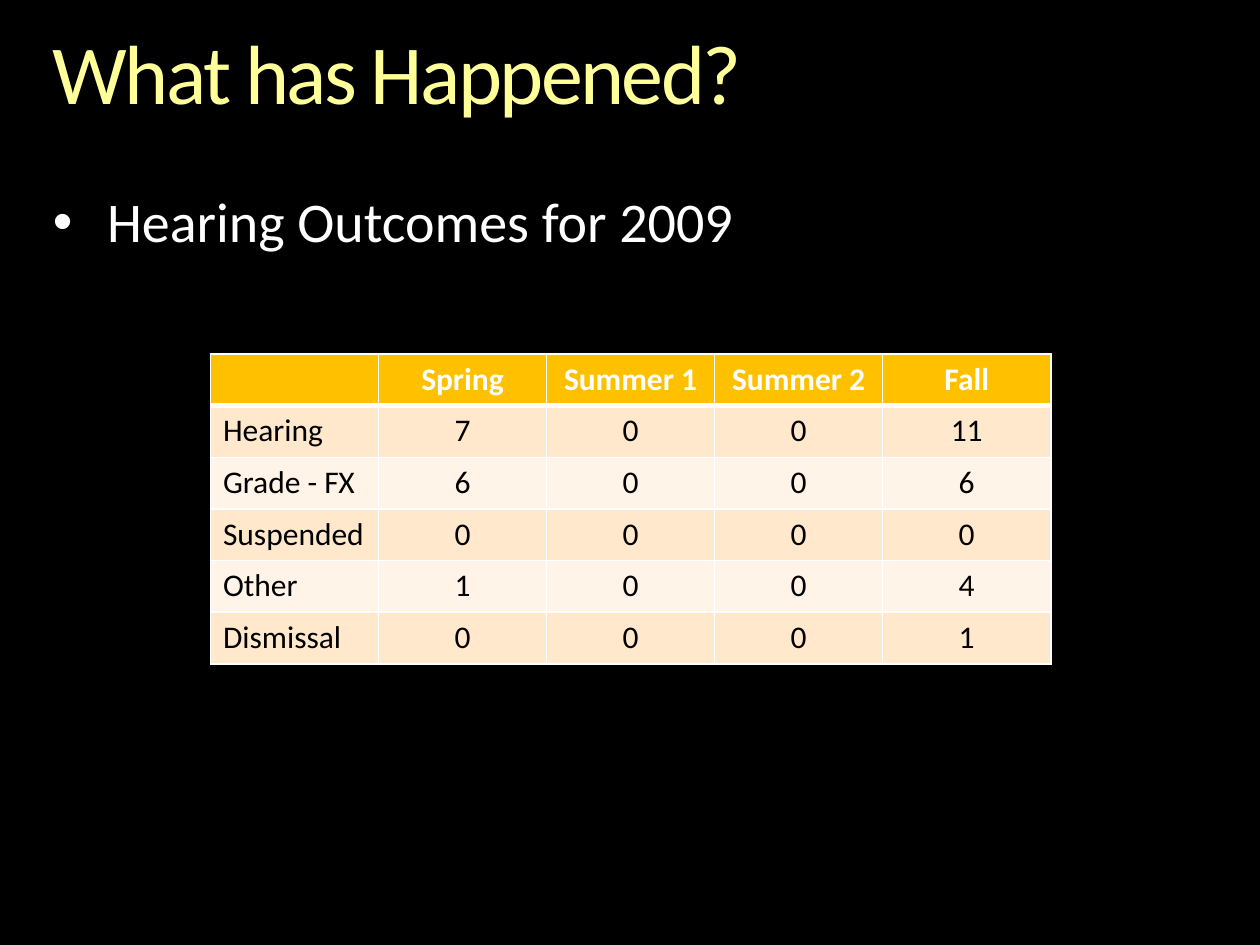
import pptx
import pptx.dml.color
import pptx.enum.text
import pptx.oxml.xmlchemy
import pptx.util
from pptx.util import Inches

TITLE = "What has Happened?"
BULLET = "Hearing Outcomes for 2009"
OUTCOMES = [
    ("", "Spring", "Summer 1", "Summer 2", "Fall"),
    ("Hearing", "7", "0", "0", "11"),
    ("Grade - FX", "6", "0", "0", "6"),
    ("Suspended", "0", "0", "0", "0"),
    ("Other", "1", "0", "0", "4"),
    ("Dismissal", "0", "0", "0", "1"),
]

FONT = "Calibri"
BLACK, WHITE, YELLOW = "000000", "FFFFFF", "FFFF99"
HEADER_FILL = "FFC000"
BAND_FILLS = ("FFF4E7", "FFE8CC")

TEXT_LEFT, TEXT_WIDTH = 0.42, 9.17
TABLE_LEFT, TABLE_TOP, TABLE_WIDTH = 1.67, 2.81, 6.67
ROW_HEIGHT = 0.41

ALIGN = pptx.enum.text.PP_ALIGN


def set_color(color_format, hex_color):
    color_format.rgb = pptx.dml.color.RGBColor.from_string(hex_color)


def set_fill(fill, hex_color):
    fill.solid()
    set_color(fill.fore_color, hex_color)


def drawing_element(tag, **attributes):
    element = pptx.oxml.xmlchemy.OxmlElement(tag)
    for name, value in attributes.items():
        element.set(name, str(value))
    return element


def write_text(frame, text, size=18, color=BLACK, bold=False,
               align=ALIGN.LEFT, line_spacing=None, tracking=None):
    paragraph = frame.paragraphs[0]
    paragraph.alignment = align
    paragraph.line_spacing = line_spacing
    run = paragraph.add_run()
    run.text = text
    run.font.name = FONT
    run.font.size = pptx.util.Pt(size)
    run.font.bold = bold
    set_color(run.font.color, color)
    if tracking is not None:
        run._r.get_or_add_rPr().set("spc", str(int(tracking * 100)))
    return paragraph


def place_placeholder(shape, top, height):
    """Move a text placeholder and strip its margins; return its text frame."""
    shape.left, shape.top = Inches(TEXT_LEFT), Inches(top)
    shape.width, shape.height = Inches(TEXT_WIDTH), Inches(height)
    frame = shape.text_frame
    frame.margin_left = frame.margin_right = 0
    frame.margin_top = frame.margin_bottom = 0
    frame.vertical_anchor = pptx.enum.text.MSO_ANCHOR.TOP
    frame.auto_size = pptx.enum.text.MSO_AUTO_SIZE.SHAPE_TO_FIT_TEXT
    frame.word_wrap = True
    return frame


def add_bullet(paragraph, indent):
    properties = paragraph._p.get_or_add_pPr()
    properties.set("marL", str(int(Inches(indent))))
    properties.set("indent", str(-int(Inches(indent))))
    properties.append(drawing_element("a:buFont", typeface="Arial"))
    properties.append(drawing_element("a:buChar", char="•"))


def set_borders(cell, **widths):
    """Draw white borders; widths are in points, keyed L, R, T and B."""
    properties = cell._tc.get_or_add_tcPr()
    for index, side in enumerate("LRTB"):
        width = int(pptx.util.Pt(widths[side]))
        line = drawing_element("a:ln" + side, w=width)
        solid = drawing_element("a:solidFill")
        solid.append(drawing_element("a:srgbClr", val=WHITE))
        line.append(solid)
        properties.insert(index, line)


def add_outcome_table(slide):
    row_count, column_count = len(OUTCOMES), len(OUTCOMES[0])
    table = slide.shapes.add_table(
        row_count, column_count, Inches(TABLE_LEFT), Inches(TABLE_TOP),
        Inches(TABLE_WIDTH), Inches(ROW_HEIGHT * row_count)).table
    for row, values in enumerate(OUTCOMES):
        header = row == 0
        for column, value in enumerate(values):
            cell = table.cell(row, column)
            set_fill(cell.fill, HEADER_FILL if header else BAND_FILLS[row % 2])
            set_borders(cell, L=1, R=1, T=3 if row == 1 else 1,
                        B=3 if header else 1)
            if value:
                write_text(cell.text_frame, value, bold=header,
                           color=WHITE if header else BLACK,
                           align=ALIGN.CENTER if column else ALIGN.LEFT)


def main():
    presentation = pptx.Presentation()
    presentation.slide_width = Inches(10)
    presentation.slide_height = Inches(7.5)
    slide = presentation.slides.add_slide(presentation.slide_layouts[1])
    set_fill(slide.background.fill, BLACK)

    title_frame = place_placeholder(slide.shapes.title, 0.25, 0.73)
    write_text(title_frame, TITLE, size=48, color=YELLOW,
               line_spacing=0.9, tracking=-1.5)

    body_frame = place_placeholder(slide.placeholders[1], 1.54, 0.48)
    bullet = write_text(body_frame, BULLET, size=32, color=WHITE,
                        line_spacing=0.9)
    bullet.space_before = 0
    add_bullet(bullet, 0.43)

    add_outcome_table(slide)
    presentation.save("out.pptx")


if __name__ == "__main__":
    main()
